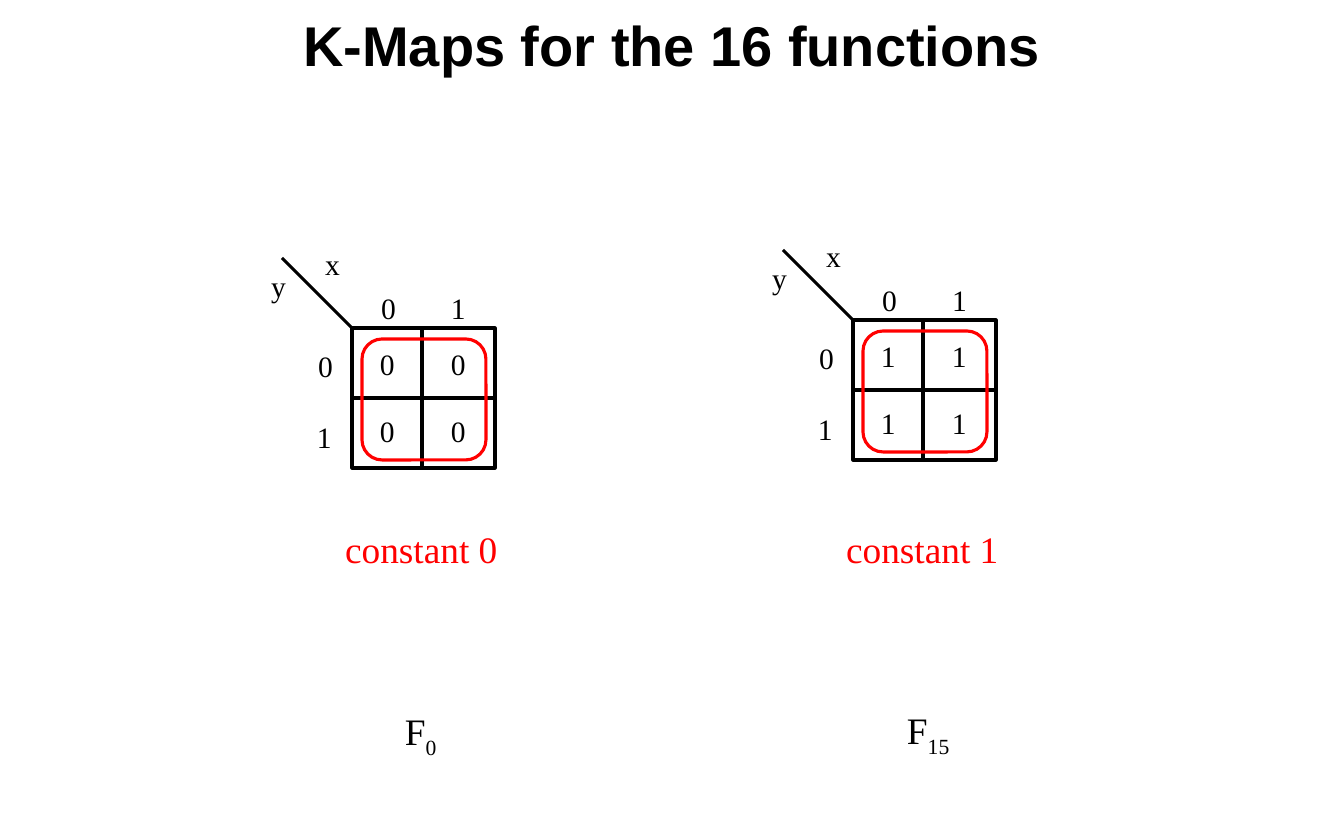
from lxml.etree import SubElement
from pptx import Presentation
from pptx.dml.color import RGBColor
from pptx.enum.shapes import MSO_CONNECTOR, MSO_SHAPE
from pptx.enum.text import MSO_ANCHOR, MSO_AUTO_SIZE, PP_ALIGN
from pptx.oxml.ns import qn
from pptx.util import Emu, Pt

SCALE = 914400 / 112
BLACK, WHITE, RED = "000000", "FFFFFF", "FF0000"
SERIF = "Times New Roman"


def px(n):
    return Emu(round(n * SCALE))


def rgb(value):
    return RGBColor.from_string(value)


def set_attrs(obj, values):
    for name, value in values.items():
        setattr(obj, name, value)


def format_run(r, size, color, font=SERIF, bold=False):
    set_attrs(r.font, {"size": Pt(size), "name": font, "bold": bold})
    r.font.color.rgb = rgb(color)


def add_text(shapes, text, box, size, color=BLACK, inset=(0, 0), subscript=""):
    tf = shapes.add_textbox(*map(px, box)).text_frame
    dx, dy = map(Pt, inset)
    set_attrs(tf, {"margin_left": dx, "margin_right": dx,
                   "margin_top": dy, "margin_bottom": dy,
                   "word_wrap": False,
                   "auto_size": MSO_AUTO_SIZE.SHAPE_TO_FIT_TEXT})
    p = tf.paragraphs[0]
    r = p.add_run()
    r.text = text
    format_run(r, size, color)
    if subscript:
        r = p.add_run()
        r.text = subscript
        format_run(r, size, color)
        r.font._element.set("baseline", "-25000")


def add_outline(shapes, kind, box, color, fill=None):
    sp = shapes.add_shape(kind, *map(px, box))
    sp.shadow.inherit = False
    if fill:
        sp.fill.solid()
        sp.fill.fore_color.rgb = rgb(fill)
    else:
        sp.fill.background()
    sp.line.color.rgb = rgb(color)
    sp.line.width = Pt(2)


def add_line(shapes, x1, y1, x2, y2):
    line = shapes.add_connector(MSO_CONNECTOR.STRAIGHT, *map(px, (x1, y1, x2, y2)))
    line.line.color.rgb = rgb(BLACK)
    line.line.width = Pt(2)
    SubElement(line._element.spPr, qn("a:effectLst"))


def add_title(s, text, box):
    sp = s.shapes.title
    set_attrs(sp, dict(zip(("left", "top", "width", "height"), map(px, box))))
    tf = sp.text_frame
    set_attrs(tf, {"vertical_anchor": MSO_ANCHOR.MIDDLE, "word_wrap": True})
    p = tf.paragraphs[0]
    p.alignment = PP_ALIGN.CENTER
    r = p.add_run()
    r.text = text
    format_run(r, 36, BLACK, "Arial", True)


def add_kmap(s, left, top, value):
    shapes = s.shapes.add_group_shape().shapes
    width, height = 143, 140
    x, y = left + 81, top + 82
    mid_x, mid_y = x + 70, y + height // 2

    add_outline(shapes, MSO_SHAPE.RECTANGLE, (x, y, width, height), BLACK, WHITE)
    add_line(shapes, x, mid_y, x + width, mid_y)
    add_line(shapes, mid_x, y, mid_x, y + height)
    add_line(shapes, x - 70, y - 70, x, y)

    labels = [("y", 0, 22), ("x", 54, 0), ("0", 47, 102), ("1", 46, 173),
              ("0", 110, 44), ("1", 180, 44)]
    for text, dx, dy in labels:
        add_text(shapes, text, (left + dx, top + dy, 22, 36), 19)
    for dy in (100, 167):
        for dx in (109, 180):
            add_text(shapes, value, (left + dx, top + dy, 15, 36), 19)

    add_outline(shapes, MSO_SHAPE.ROUNDED_RECTANGLE, (x + 10, y + 11, 124, 121), RED)


def add_function(s, left, top, value, index, label_box):
    add_kmap(s, left, top, value)
    inset = (7.2, 3.6)
    add_text(s.shapes, f"constant {value}", (left + 63, 521, 176, 57), 24, RED, inset)
    add_text(s.shapes, "F", label_box, 24, BLACK, inset, index)


def main():
    prs = Presentation()
    set_attrs(prs, {"slide_width": px(1344), "slide_height": px(840)})
    s = prs.slides.add_slide(prs.slide_layouts[5])
    add_title(s, "K-Maps for the 16 functions", (112, 2, 1120, 84))
    add_function(s, 271, 246, "0", "0", (394, 703, 56, 56))
    add_function(s, 772, 238, "1", "15", (896, 702, 68, 56))
    prs.save("out.pptx")


if __name__ == "__main__":
    main()
